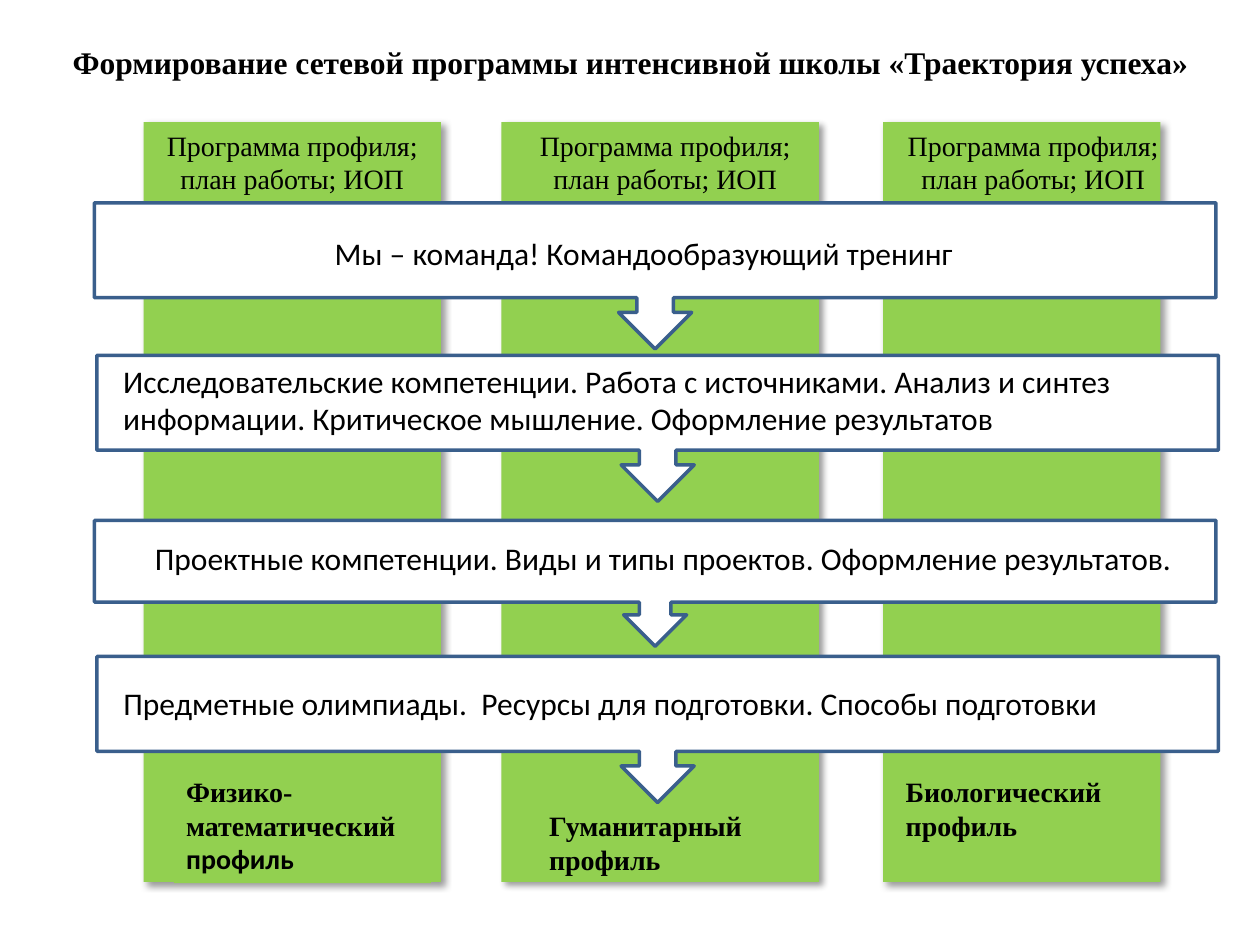
"""Build the slide on the network programme of an intensive school."""
import pptx
import pptx.dml.color
import pptx.enum.shapes
import pptx.enum.text
import pptx.oxml.ns
import pptx.util
import lxml.etree

Inches = pptx.util.Inches
Shapes = pptx.enum.shapes.MSO_SHAPE
Align = pptx.enum.text.PP_ALIGN
Anchor = pptx.enum.text.MSO_ANCHOR

COLORS = {"column": "92D050", "box": "FFFFFF", "border": "3A5F8C", "text": "000000"}
SERIF = "Times New Roman"
SANS = "Calibri"


class SlideBuilder:
    def __init__(self, slide):
        self.slide = slide

    def color(self, name):
        return pptx.dml.color.RGBColor.from_string(COLORS[name])

    def block(self, kind, place, fill, border=None):
        shape = self.slide.shapes.add_shape(kind, *map(Inches, place))
        shape.shadow.inherit = False
        shape.fill.solid()
        shape.fill.fore_color.rgb = self.color(fill)
        if border:
            shape.line.color.rgb = self.color(border)
            shape.line.width = pptx.util.Pt(2)
        else:
            shape.line.fill.background()
        return shape

    def column(self, left, width):
        shape = self.block(Shapes.RECTANGLE, (left, 0.97, width, 6.03), "column")
        qn = pptx.oxml.ns.qn
        effects = shape._element.spPr.find(qn("a:effectLst"))
        shadow = lxml.etree.SubElement(
            effects, qn("a:outerShdw"), blurRad=str(pptx.util.Pt(4)),
            dist=str(pptx.util.Pt(3)), dir="2700000", algn="tl", rotWithShape="0")
        shade = lxml.etree.SubElement(shadow, qn("a:srgbClr"), val=COLORS["text"])
        lxml.etree.SubElement(shade, qn("a:alpha"), val="40000")

    def callout(self, left, top, height):
        self.block(Shapes.DOWN_ARROW_CALLOUT, (left, top, 8.9, height), "box", "border")

    def set_text(self, shape, text, font, size, bold=False, align=Align.LEFT):
        frame = shape.text_frame
        frame.text = text
        frame.word_wrap = True
        frame.auto_size = pptx.enum.text.MSO_AUTO_SIZE.NONE
        frame.vertical_anchor = Anchor.TOP
        paragraph = frame.paragraphs[0]
        paragraph.alignment = align
        for run in paragraph.runs:
            self.style(run, font, size, bold)
        return paragraph

    def style(self, run, font, size, bold):
        run.font.name = font
        run.font.size = pptx.util.Pt(size)
        run.font.bold = bold
        run.font.color.rgb = self.color("text")

    def title(self, place, text):
        shape = self.slide.shapes.title
        shape.left, shape.top, shape.width, shape.height = map(Inches, place)
        self.set_text(shape, text, SERIF, 18, True, Align.CENTER)

    def label(self, place, text, font, size, bold=False, align=Align.LEFT):
        shape = self.slide.shapes.add_textbox(*map(Inches, place))
        self.set_text(shape, text, font, size, bold, align)

    def filled_label(self, place, fill, text, font, size, bold=False):
        shape = self.block(Shapes.RECTANGLE, place, fill)
        return self.set_text(shape, text, font, size, bold)


def main():
    presentation = pptx.Presentation()
    presentation.slide_width, presentation.slide_height = Inches(10), Inches(7.5)
    builder = SlideBuilder(presentation.slides.add_slide(presentation.slide_layouts[5]))

    builder.title((0.35, 0.29, 9.31, 0.4),
                  "Формирование сетевой программы интенсивной школы «Траектория успеха»")

    for left, width in ((1.14, 2.36), (3.98, 2.52), (7.01, 2.2)):
        builder.column(left, width)

    for left, top, height in ((0.75, 1.61, 1.16), (0.77, 2.82, 1.16),
                              (0.75, 4.13, 1), (0.77, 5.21, 1.16)):
        builder.callout(left, top, height)

    stages = (
        ((1.37, 1.81, 7.48, 0.4), Align.CENTER, "Мы – команда! Командообразующий тренинг"),
        ((0.88, 2.82, 8.77, 0.71), Align.LEFT,
         "Исследовательские компетенции. Работа с источниками. Анализ и синтез "
         "информации. Критическое мышление. Оформление результатов"),
        ((0.88, 4.23, 8.77, 0.4), Align.CENTER,
         "Проектные компетенции. Виды и типы проектов. Оформление результатов."),
    )
    for place, align, text in stages:
        builder.label(place, text, SANS, 18, align=align)
    builder.filled_label(
        (0.88, 5.38, 8.58, 0.4), "box",
        "Предметные олимпиады.  Ресурсы для подготовки. Способы подготовки", SANS, 18)

    builder.label((4.26, 6.37, 2.05, 0.64), "Гуманитарный профиль", SERIF, 16, True)
    physics = builder.filled_label(
        (1.38, 6.1, 2.04, 0.91), "column", "Физико-математический", SERIF, 16, True)
    ending = physics.add_run()
    ending.text = " профиль"
    builder.style(ending, SANS, 16, True)
    builder.label((7.09, 6.1, 2.04, 0.64), "Биологический профиль", SERIF, 16, True)

    for left in (1.14, 4.1, 7.02):
        builder.label((left, 0.97, 2.36, 0.64), "Программа профиля; план работы; ИОП",
                      SERIF, 16, align=Align.CENTER)

    presentation.save("out.pptx")


if __name__ == "__main__":
    main()
